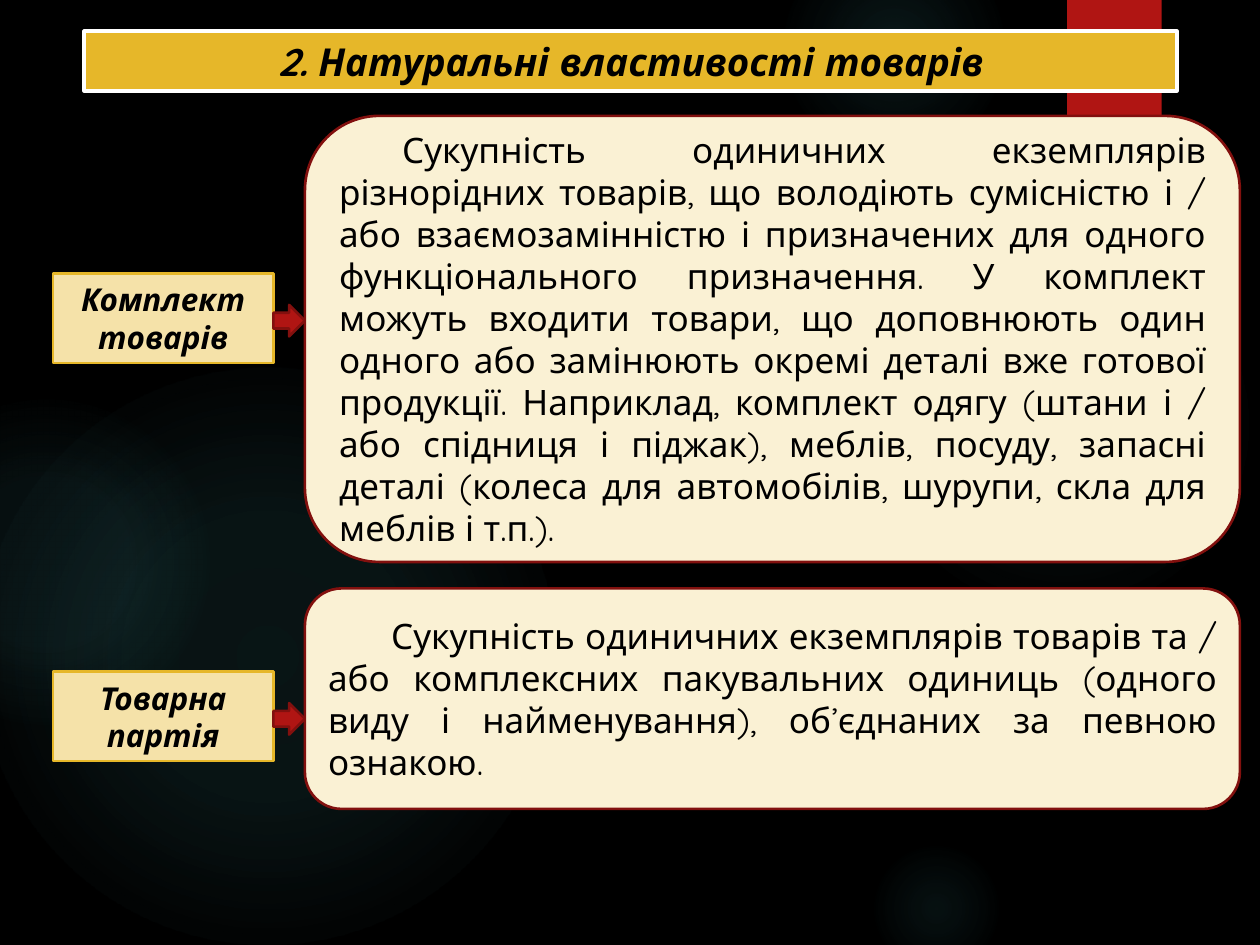
from lxml import etree
from pptx import Presentation
from pptx.dml.color import RGBColor
from pptx.enum.shapes import MSO_SHAPE
from pptx.enum.text import MSO_ANCHOR, PP_ALIGN
from pptx.oxml import parse_xml
from pptx.util import Inches, Pt

RECT = MSO_SHAPE.RECTANGLE
ROUND = MSO_SHAPE.ROUNDED_RECTANGLE
ARROW = MSO_SHAPE.RIGHT_ARROW
OVAL = MSO_SHAPE.OVAL
MIDDLE = MSO_ANCHOR.MIDDLE
CENTER = PP_ALIGN.CENTER
JUSTIFY = PP_ALIGN.JUSTIFY

BLACK = RGBColor(0x00, 0x00, 0x00)
WHITE = RGBColor(0xFF, 0xFF, 0xFF)
RED = RGBColor(0xB0, 0x15, 0x13)
DARK_RED = RGBColor(0x82, 0x10, 0x0E)
GOLD = RGBColor(0xE6, 0xB7, 0x29)
SAND = RGBColor(0xF5, 0xE2, 0xA9)
CREAM = RGBColor(0xFA, 0xF1, 0xD4)
TEAL = RGBColor(0x50, 0xB9, 0xC1)

FONT = "Quicksand"
NS = "http://schemas.openxmlformats.org/drawingml/2006/main"

GLOWS = [
    (6.89, 1.83, 3.08, (7, 6), 69),
    (6.22, -0.5, 1.75, (14, 7), 73),
    (6.89, 6.67, 1.08, (9, 5), 66),
    (-0.17, 2.92, 4.58, (11, 10), 75),
    (-0.92, 3.17, 2.58, (8, 8), 72),
]

TERMS = [
    ("Комплект товарів", 2.17, 0.92, 3.54,
     "Сукупність одиничних екземплярів різнорідних товарів, що володіють "
     "сумісністю і / або взаємозамінністю і призначених для одного "
     "функціонального призначення. У комплект можуть входити товари, що "
     "доповнюють один одного або замінюють окремі деталі вже готової "
     "продукції. Наприклад, комплект одягу (штани і / або спідниця і піджак), "
     "меблів, посуду, запасні деталі (колеса для автомобілів, шурупи, скла "
     "для меблів і т.п.)."),
    ("Товарна партія", 5.33, 4.67, 1.75,
     "Сукупність одиничних екземплярів товарів та / або комплексних "
     "пакувальних одиниць (одного виду і найменування), об’єднаних за певною "
     "ознакою."),
]


class SlideBuilder:
    def __init__(self, s):
        self.s = s

    def shape(self, kind, x, y, w, h, fill, line=None, width=1.5):
        sp = self.s.shapes.add_shape(kind, Inches(x), Inches(y), Inches(w), Inches(h))
        sp.shadow.inherit = False
        sp.fill.solid()
        sp.fill.fore_color.rgb = fill
        if line is None:
            sp.line.fill.background()
        else:
            sp.line.color.rgb = line
            sp.line.width = Pt(width)
        return sp

    def glow(self, x, y, size, alphas, edge):
        sp = self.shape(OVAL, x, y, size, size, TEAL)
        stops = "".join(
            f'<a:gs pos="{pos * 1000}"><a:srgbClr val="{TEAL}">'
            f'<a:alpha val="{alpha * 1000}"/></a:srgbClr></a:gs>'
            for pos, alpha in zip((0, 36, edge), (*alphas, 0)))
        grad = parse_xml(
            f'<a:gradFill xmlns:a="{NS}"><a:gsLst>{stops}</a:gsLst>'
            '<a:path path="circle"><a:fillToRect l="50000" t="50000" '
            'r="50000" b="50000"/></a:path></a:gradFill>')
        solid = sp._element.spPr.find(f"{{{NS}}}solidFill")
        solid.getparent().replace(solid, grad)

    def ribbon(self, x, y, w, h):
        sp = self.shape(RECT, x, y, w, h, RED)
        effects = sp._element.spPr.find(f"{{{NS}}}effectLst")
        shadow = etree.SubElement(effects, f"{{{NS}}}outerShdw", blurRad=str(Pt(3)),
                                  dist=str(Pt(2)), dir="5400000", rotWithShape="0")
        color = etree.SubElement(shadow, f"{{{NS}}}srgbClr", val=str(BLACK))
        etree.SubElement(color, f"{{{NS}}}alpha", val="45000")

    def text(self, sp, text, size, align, strong=False):
        tf = sp.text_frame
        tf.word_wrap = True
        tf.vertical_anchor = MIDDLE
        p = tf.paragraphs[0]
        p.alignment = align
        r = p.add_run()
        r.text = text
        r.font.name = FONT
        r.font.size = Pt(size)
        r.font.bold = r.font.italic = strong
        r.font.color.rgb = BLACK
        return p

    def label(self, text, x, y, w, h, size, fill, line, width):
        sp = self.shape(RECT, x, y, w, h, fill, line, width)
        self.text(sp, text, size, CENTER, strong=True)

    def arrow(self, x, y, size):
        self.shape(ARROW, x, y, size, size, RED, DARK_RED)

    def definition(self, text, x, y, w, h):
        sp = self.shape(ROUND, x, y, w, h, CREAM, DARK_RED)
        p = self.text(sp, text, 20, JUSTIFY)
        p._p.get_or_add_pPr().set("indent", str(Inches(0.5)))


def main():
    prs = Presentation()
    prs.slide_width = Inches(10)
    prs.slide_height = Inches(7.5)
    s = prs.slides.add_slide(prs.slide_layouts[6])
    s.background.fill.solid()
    s.background.fill.fore_color.rgb = BLACK

    b = SlideBuilder(s)
    for glow in GLOWS:
        b.glow(*glow)
    b.ribbon(8.47, 0, 0.75, 1.2)
    b.label("2. Натуральні властивості товарів", 0.67, 0.25, 8.67, 0.47,
            22, GOLD, WHITE, 2.25)
    for term, label_top, top, height, meaning in TERMS:
        b.label(term, 0.42, label_top, 1.75, 0.71, 18, SAND, GOLD, 1.5)
        b.arrow(2.17, label_top + 0.25, 0.25)
        b.definition(meaning, 2.42, top, 7.42, height)

    prs.save("out.pptx")


if __name__ == "__main__":
    main()
